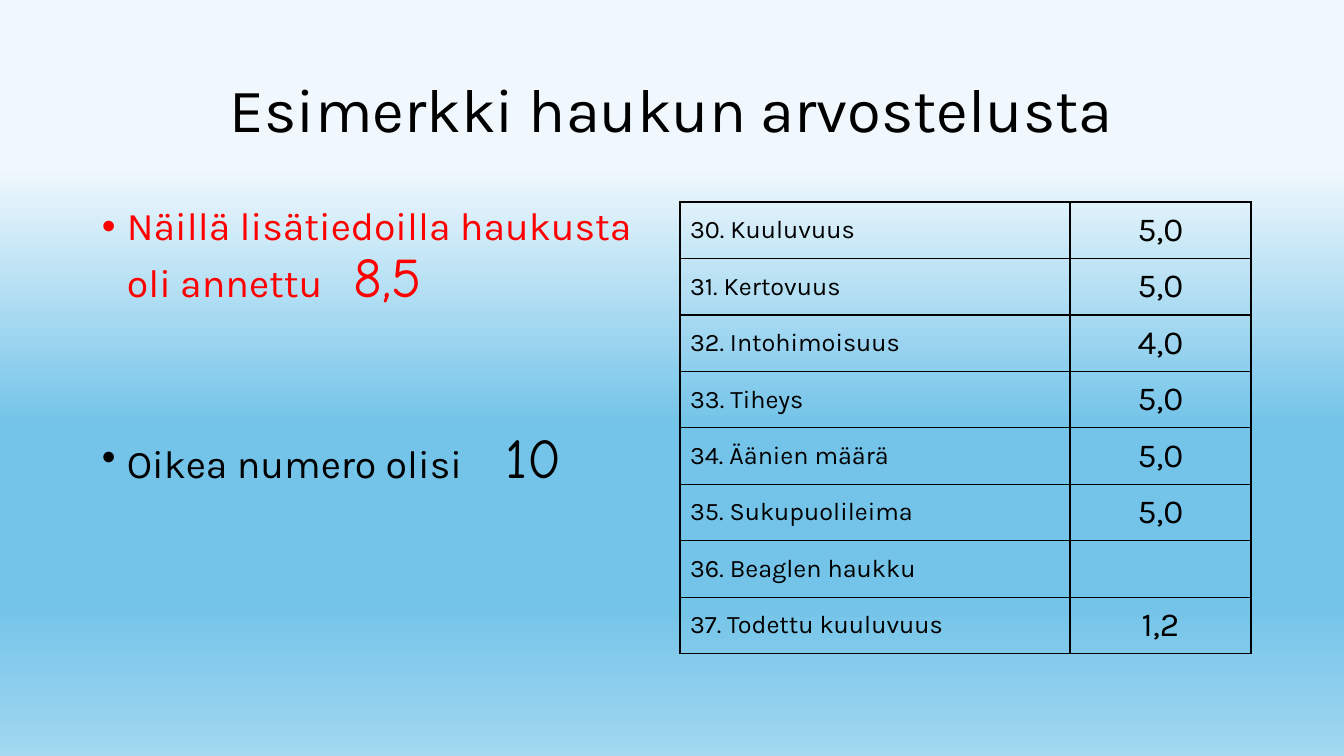
from lxml import etree
from pptx import Presentation
from pptx import util as u
from pptx.dml.color import RGBColor
from pptx.enum import text
from pptx.oxml import ns

BODY_FONT, SCORE_FONT = "Karla", "Comic Neue"
BLACK, RED = "000000", "FF0000"
SKY = [(22, "F0F8FD"), (56, "74C4E9"), (80, "74C4E9"), (100, "A2D8F0")]
SCORES = [
    ("30. Kuuluvuus", "5,0"),
    ("31. Kertovuus", "5,0"),
    ("32. Intohimoisuus", "4,0"),
    ("33. Tiheys", "5,0"),
    ("34. Äänien määrä", "5,0"),
    ("35. Sukupuolileima", "5,0"),
    ("36. Beaglen haukku", ""),
    ("37. Todettu kuuluvuus", "1,2"),
]


def px(n):
    return u.Emu(round(n * 914400 / 100.8))


def rgb(color):
    return RGBColor.from_string(color)


def sub(parent, tag, **attrs):
    return etree.SubElement(parent, ns.qn(tag), attrs)


def add_run(p, words, size, color=BLACK, font=BODY_FONT):
    r = p.add_run()
    r.text = words
    r.font.size = u.Pt(size)
    r.font.name = font
    r.font.color.rgb = rgb(color)


def set_background(s, stops):
    fill = s.background.fill
    fill.gradient()
    fill.gradient_angle = 270
    gs_list = s._element.find(".//" + ns.qn("a:gsLst"))
    gs_list.clear()
    for percent, color in stops:
        gs = sub(gs_list, "a:gs", pos=str(percent * 1000))
        sub(gs, "a:srgbClr", val=color)


def add_text_box(s, x, y, w, h, anchor):
    tf = s.shapes.add_textbox(px(x), px(y), px(w), px(h)).text_frame
    tf.word_wrap = True
    tf.vertical_anchor = anchor
    return tf


def add_title(s, words):
    tf = add_text_box(s, 92, 40, 1160, 146, text.MSO_ANCHOR.MIDDLE)
    p = tf.paragraphs[0]
    p.alignment = text.PP_ALIGN.CENTER
    p.line_spacing = 0.9
    add_run(p, words, 44)


def add_score_bullet(p, label, score, color, space_before):
    """Fill a bulleted paragraph with a label and a larger score after a tab."""
    p.line_spacing = 0.9
    p.space_before = u.Pt(space_before)
    props = p._p.get_or_add_pPr()
    props.set("marL", str(px(25)))
    props.set("indent", str(-px(25)))
    sub(props, "a:buFont", typeface="Arial")
    sub(props, "a:buChar", char="•")
    add_run(p, label + "\t", 28, color)
    add_run(p, score, 40, color, SCORE_FONT)


def add_borders(cell, color):
    props = cell._tc.get_or_add_tcPr()
    for side in ("a:lnL", "a:lnR", "a:lnT", "a:lnB"):
        ln = sub(props, side, w=str(u.Pt(1)))
        sub(sub(ln, "a:solidFill"), "a:srgbClr", val=color)


def fill_cell(cell, words, size, align):
    add_borders(cell, BLACK)
    cell.fill.background()
    cell.vertical_anchor = text.MSO_ANCHOR.MIDDLE
    p = cell.text_frame.paragraphs[0]
    p.alignment = align
    if words:
        add_run(p, words, size)


def add_score_table(s, rows):
    table = s.shapes.add_table(len(rows), 2, px(680), px(202), px(571), px(452)).table
    table.first_row = table.horz_banding = False
    for column, width in zip(table.columns, (390, 181)):
        column.width = px(width)
    for i, (label, score) in enumerate(rows):
        fill_cell(table.cell(i, 0), label, 18, text.PP_ALIGN.LEFT)
        fill_cell(table.cell(i, 1), score, 24, text.PP_ALIGN.CENTER)


def main():
    prs = Presentation()
    prs.slide_width, prs.slide_height = px(1344), px(756)
    s = prs.slides.add_slide(prs.slide_layouts[6])
    set_background(s, SKY)
    add_title(s, "Esimerkki haukun arvostelusta")
    tf = add_text_box(s, 92, 202, 572, 480, text.MSO_ANCHOR.TOP)
    add_score_bullet(tf.paragraphs[0], "Näillä lisätiedoilla haukusta oli annettu", "8,5", RED, 0)
    add_score_bullet(tf.add_paragraph(), "Oikea numero olisi", "10", BLACK, 86)
    add_score_table(s, SCORES)
    prs.save("out.pptx")


if __name__ == "__main__":
    main()
